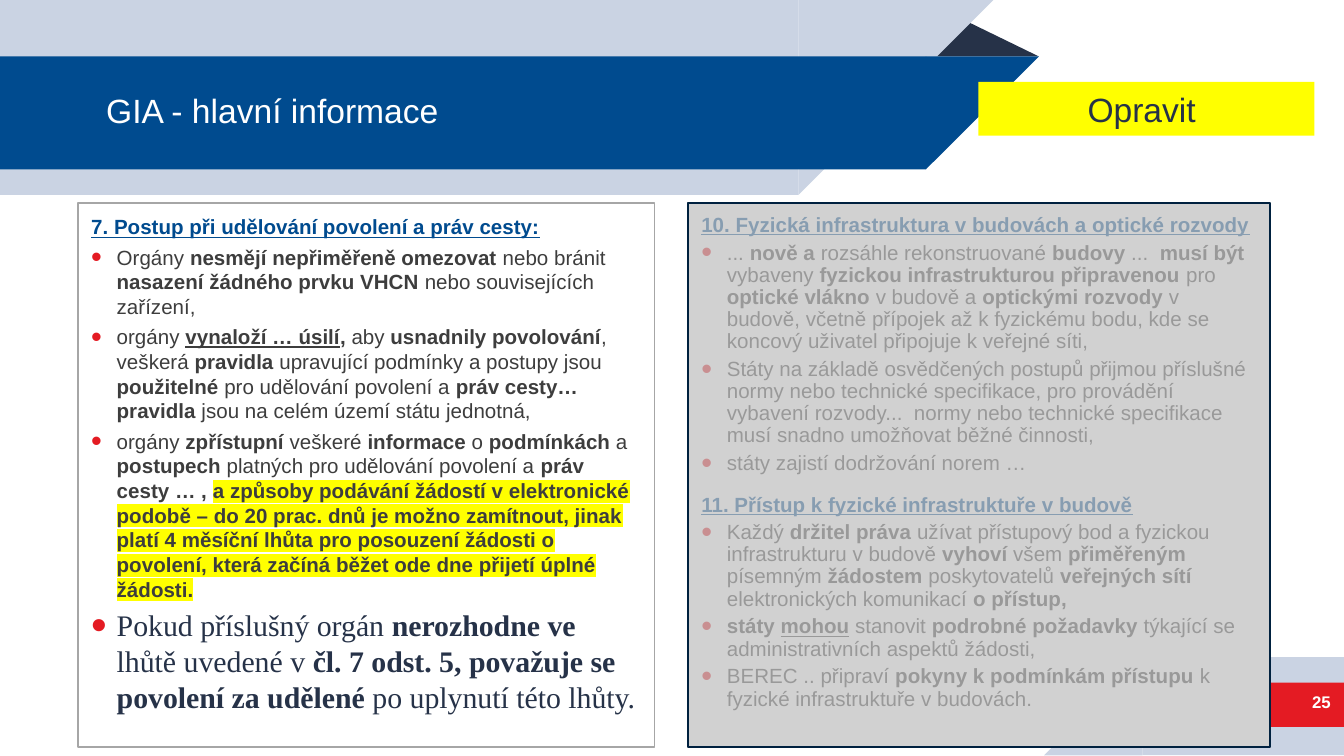
from lxml import etree
from pptx import Presentation
from pptx import util as u
from pptx.dml.color import RGBColor
from pptx.enum import shapes, text
from pptx.oxml.ns import qn

COLORS = {
    "white": "FFFFFF", "pale": "CAD3E3", "blue": "004B8F", "navy": "263248",
    "red": "E41B23", "body": "3D3D3D", "border": "A6A6A6", "yellow": "FFFF00",
    "veil": "BFBFBF", "veil_line": "00213F",
}
RECT = shapes.MSO_SHAPE.RECTANGLE
RIGHT_TRIANGLE = shapes.MSO_SHAPE.RIGHT_TRIANGLE
TRIANGLE = shapes.MSO_SHAPE.ISOSCELES_TRIANGLE
MIDDLE = text.MSO_ANCHOR.MIDDLE


class SlideBuilder:
    def __init__(self, slide, font="Arial"):
        self.slide = slide
        self.font = font

    def color(self, name):
        return RGBColor.from_string(COLORS[name])

    def place(self, shape, box):
        shape.left, shape.top, shape.width, shape.height = map(u.Inches, box)

    def shape(self, kind, box, fill, line=None, width=0.75, alpha=None, flip=False, turn=0):
        shape = self.slide.shapes.add_shape(kind, *map(u.Inches, box))
        shape.shadow.inherit = False
        shape.fill.solid()
        shape.fill.fore_color.rgb = self.color(fill)
        if line:
            shape.line.color.rgb = self.color(line)
            shape.line.width = u.Pt(width)
        else:
            shape.line.fill.background()
        if alpha:
            tint = shape._element.spPr.find(qn("a:solidFill"))[0]
            etree.SubElement(tint, qn("a:alpha")).set("val", str(alpha * 1000))
        shape.rotation = turn
        if flip:
            shape._element.spPr.find(qn("a:xfrm")).set("flipH", "1")
        return shape

    def run(self, paragraph, words, size, color, flags="", font=None):
        """Flags: b = bold, u = underlined, h = highlighted."""
        run = paragraph.add_run()
        run.text = words
        run.font.name = font or self.font
        run.font.size = u.Pt(size)
        run.font.bold = "b" in flags
        run.font.underline = "u" in flags
        run.font.color.rgb = self.color(color)
        if "h" in flags:
            highlight = etree.Element(qn("a:highlight"))
            etree.SubElement(highlight, qn("a:srgbClr")).set("val", COLORS["yellow"])
            run._r.rPr.find(qn("a:solidFill")).addnext(highlight)

    def label(self, shape, words, size, color, align, flags="", anchor=MIDDLE):
        frame = shape.text_frame
        frame.word_wrap = True
        frame.auto_size = text.MSO_AUTO_SIZE.NONE
        frame.vertical_anchor = anchor
        paragraph = frame.paragraphs[0]
        paragraph.alignment = align
        self.run(paragraph, words, size, color, flags)
        return paragraph

    def title(self, words, box):
        title = self.slide.shapes.title
        self.place(title, box)
        self.slide.shapes._spTree.append(title._element)
        paragraph = self.label(title, words, 18, "white", text.PP_ALIGN.LEFT)
        paragraph.line_spacing = 0.9

    def text_box(self, words, box, size, color, align, flags=""):
        shape = self.slide.shapes.add_textbox(*map(u.Inches, box))
        self.label(shape, words, size, color, align, flags)

    def bullet(self, paragraph):
        properties = paragraph._p.get_or_add_pPr()
        properties.set("marL", str(u.Inches(0.19)))
        properties.set("indent", str(-u.Inches(0.19)))
        tint = etree.SubElement(properties, qn("a:buClr"))
        etree.SubElement(tint, qn("a:srgbClr")).set("val", COLORS["red"])
        for tag, key, value in (("buSzPct", "val", "150000"),
                                ("buFont", "typeface", "Arial"), ("buChar", "char", "•")):
            etree.SubElement(properties, qn("a:" + tag)).set(key, value)

    def panel(self, box, items, heading_spacing, bullet_spacing):
        """A string is a heading; a list of (words, flags) is a bullet."""
        shape = self.shape(RECT, box, "white", "border")
        frame = shape.text_frame
        frame.word_wrap = True
        frame.vertical_anchor = text.MSO_ANCHOR.TOP
        for index, item in enumerate(items):
            paragraph = frame.add_paragraph() if index else frame.paragraphs[0]
            paragraph.alignment = text.PP_ALIGN.LEFT
            heading = isinstance(item, str)
            paragraph.line_spacing = heading_spacing if heading else bullet_spacing
            paragraph.space_before = u.Pt((7.5 if heading else 3) if index else 0)
            if heading:
                self.run(paragraph, item, 11, "blue", "bu")
                continue
            self.bullet(paragraph)
            for words, flags in item:
                if "L" in flags:  # large serif remark
                    self.run(paragraph, words, 16, "navy", flags, "Times New Roman")
                else:
                    self.run(paragraph, words, 11, "body", flags)


PERMITS = [
    "7. Postup při udělování povolení a práv cesty:",
    [("Orgány ", ""), ("nesmějí nepřiměřeně omezovat ", "b"), ("nebo bránit ", ""),
     ("nasazení žádného prvku VHCN ", "b"), ("nebo souvisejících zařízení,", "")],
    [("orgány ", ""), ("vynaloží … úsilí", "bu"), (", ", "b"), ("aby ", ""),
     ("usnadnily povolování", "b"), (", veškerá ", ""), ("pravidla", "b"),
     (" upravující podmínky a postupy jsou  ", ""), ("použitelné", "b"),
     (" pro udělování povolení a ", ""), ("práv cesty… pravidla ", "b"),
     ("jsou na celém území státu jednotná,", "")],
    [("orgány ", ""), ("zpřístupní", "b"), (" veškeré ", ""), ("informace", "b"),
     (" o ", ""), ("podmínkách", "b"), (" a ", ""), ("postupech", "b"),
     (" platných pro udělování povolení a ", ""), ("práv cesty … , ", "b"),
     ("a způsoby podávání žádostí v elektronické podobě – do 20 prac. dnů je možno "
      "zamítnout, jinak platí 4 měsíční lhůta pro posouzení žádosti o povolení, "
      "která začíná běžet ode dne přijetí úplné žádosti.", "bh")],
    [("Pokud příslušný orgán ", "L"), ("nerozhodne ve ", "Lb"), ("lhůtě uvedené v ", "L"),
     ("čl. 7 odst. 5, považuje se povolení za udělené ", "Lb"),
     ("po uplynutí této lhůty.", "L")],
]
BUILDINGS = [
    "10. Fyzická infrastruktura v budovách a optické rozvody",
    [("... ", ""), ("nově a", "b"), (" rozsáhle rekonstruované ", ""), ("budovy", "b"),
     (" ...  ", ""), ("musí být ", "b"), ("vybaveny ", ""),
     ("fyzickou infrastrukturou připravenou ", "b"), ("pro ", ""),
     ("optické vlákno ", "b"), ("v budově a ", ""), ("optickými rozvody", "b"),
     (" v budově, včetně přípojek až k fyzickému bodu, kde se koncový uživatel "
      "připojuje k veřejné síti,", "")],
    [("Státy na základě osvědčených postupů přijmou příslušné normy nebo technické "
      "specifikace, pro provádění vybavení rozvody...  normy nebo technické "
      "specifikace musí snadno umožňovat běžné činnosti,", "")],
    [("státy zajistí dodržování norem …", "")],
    "11. Přístup k fyzické infrastruktuře v budově",
    [("Každý ", ""), ("držitel práva ", "b"),
     ("užívat přístupový bod a fyzickou infrastrukturu v budově ", ""), ("vyhoví", "b"),
     (" všem ", ""), ("přiměřeným", "b"), (" písemným ", ""), ("žádostem", "b"),
     (" poskytovatelů ", ""), ("veřejných sítí", "b"),
     (" elektronických komunikací ", ""), ("o přístup,", "b")],
    [("státy ", "b"), ("mohou", "bu"), (" ", "b"), ("stanovit ", ""),
     ("podrobné požadavky ", "b"), ("týkající se administrativních aspektů žádosti,", "")],
    [("BEREC .. připraví ", ""), ("pokyny k podmínkám přístupu ", "b"),
     ("k fyzické infrastruktuře v budovách.", "")],
]


def main():
    presentation = Presentation()
    presentation.slide_width = u.Inches(10)
    presentation.slide_height = presentation.slide_width * 9 // 16
    slide = presentation.slides.add_slide(presentation.slide_layouts[5])
    builder = SlideBuilder(slide)

    # Header bands, each ending in a slanted tip
    fold = builder.shape(TRIANGLE, (6.88, 0.14, 0.85, 0.28), "navy")
    fold.adjustments[0] = 0.324
    for top, width, height, fill in ((0, 5.94, 1.45, "pale"), (0.42, 6.89, 0.84, "blue")):
        builder.shape(RECT, (0, top, width, height), fill, flip=True, turn=180)
        builder.shape(RIGHT_TRIANGLE, (width, top, height, height), fill, flip=True, turn=180)

    # Footer bands
    builder.shape(RECT, (8.5, 4.89, 1.5, 0.73), "pale", flip=True)
    builder.shape(RIGHT_TRIANGLE, (7.77, 4.89, 0.73, 0.73), "pale", flip=True)
    builder.shape(RECT, (7.93, 5.08, 2.07, 0.33), "red", flip=True)

    # Title and page number
    builder.title("GIA - hlavní informace", (0.69, 0.42, 6.8, 0.84))
    builder.text_box("25", (8.95, 5.07, 1.05, 0.3), 9, "white", text.PP_ALIGN.RIGHT, "b")

    # Text panels
    right_box = (5.12, 1.51, 4.33, 4.05)
    builder.panel((0.58, 1.51, 4.29, 4.05), PERMITS, 1.2, 1.0)
    builder.panel(right_box, BUILDINGS, 1.1, 0.9)

    # Correction tag and the veil over the right panel
    tag = builder.shape(RECT, (7.28, 0.61, 2.5, 0.4), "yellow")
    builder.label(tag, "Opravit ", 18, "navy", text.PP_ALIGN.CENTER, anchor=text.MSO_ANCHOR.TOP)
    builder.shape(RECT, right_box, "veil", "veil_line", 1, alpha=71)

    presentation.save("out.pptx")


if __name__ == "__main__":
    main()
